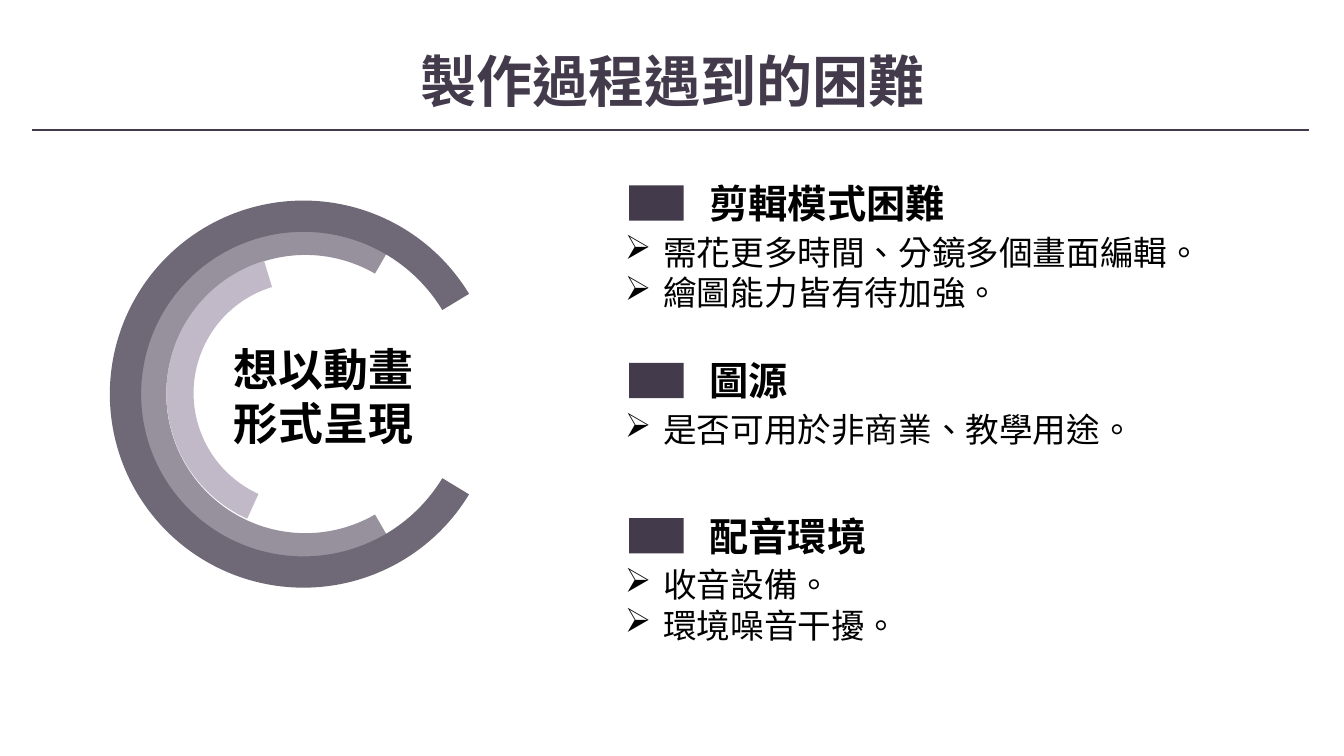
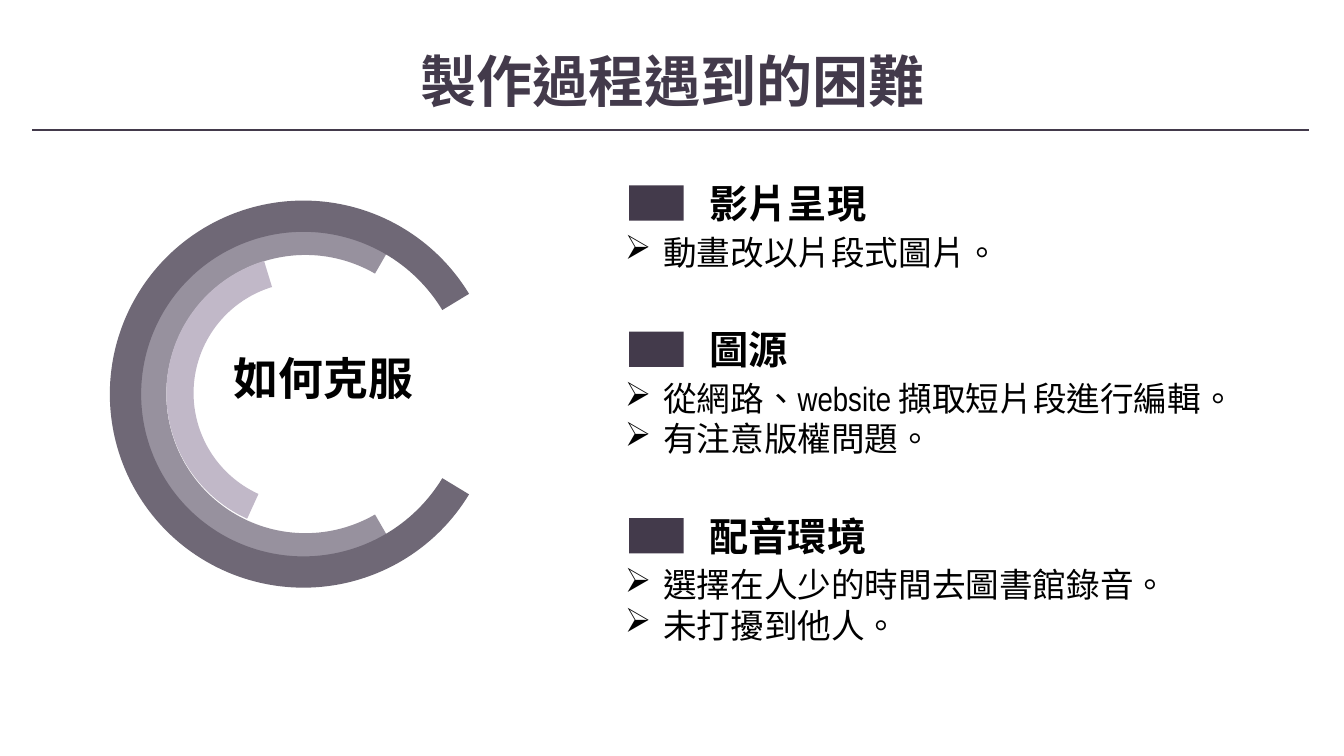
"""Two slides on production problems and how they were solved."""
from dataclasses import dataclass

from lxml import etree
from pptx import Presentation
from pptx.dml.color import RGBColor
from pptx.enum.lang import MSO_LANGUAGE_ID
from pptx.enum.shapes import MSO_CONNECTOR, MSO_SHAPE
from pptx.enum.text import MSO_ANCHOR, MSO_AUTO_SIZE, PP_ALIGN
from pptx.oxml.ns import qn
from pptx.util import Inches, Pt

ARC, RECT = MSO_SHAPE.BLOCK_ARC, MSO_SHAPE.RECTANGLE
LINE = MSO_CONNECTOR.STRAIGHT
GROW = MSO_AUTO_SIZE.SHAPE_TO_FIT_TEXT
TOP, MIDDLE = MSO_ANCHOR.TOP, MSO_ANCHOR.MIDDLE
CENTER = PP_ALIGN.CENTER
CHINESE = MSO_LANGUAGE_ID.TRADITIONAL_CHINESE

DARK, BLACK = "433A4B", "000000"
BODY, NARROW, HEAD = "Calibri", "Arial Narrow", "Noto Sans CJK JP"
TITLE = "製作過程遇到的困難"
INDENT = 0.38


@dataclass(frozen=True)
class Ring:
    x: float
    y: float
    outer: float
    inner: float
    start: float
    end: float
    fill: str
    alpha: int = 100


@dataclass(frozen=True)
class Part:
    text: str
    face: str = BODY


@dataclass(frozen=True)
class Topic:
    top: float
    head: str
    points: list[list[Part]]
    width: float = 5.73


@dataclass(frozen=True)
class Page:
    label: list[str]
    top: float
    topics: list[Topic]


RINGS = [
    Ring(3.03, 3.91, 1.65, 1.38, 60, 300, "7B7383", 78),
    Ring(3.02, 3.9, 1.37, 1.1, 114.5, 253, "C1B8C8"),
    Ring(3.01, 3.91, 1.92, 1.61, 31.2, 328.8, "6F6876"),
]

PAGES = [
    Page(["想以動畫", "形式呈現"], 3.34, [
        Topic(1.84, "剪輯模式困難", [
            [Part("需花更多時間、分鏡多個畫面編輯。")],
            [Part("繪圖能力皆有待加強。")],
        ]),
        Topic(3.6, "圖源", [[Part("是否可用於非商業、教學用途。")]]),
        Topic(5.14, "配音環境", [
            [Part("收音設備。")],
            [Part("環境噪音干擾。")],
        ]),
    ]),
    Page(["如何克服"], 3.43, [
        Topic(1.84, "影片呈現", [[Part("動畫改以片段式圖片。")]]),
        Topic(3.29, "圖源", [
            [Part("從網路、"), Part("website", NARROW),
             Part(" 擷取短片段進行編輯。")],
            [Part("有注意版權問題。")],
        ], 5.99),
        Topic(5.14, "配音環境", [
            [Part("選擇在人少的時間去圖書館錄音。")],
            [Part("未打擾到他人。")],
        ]),
    ]),
]


def paint(fill, color: str) -> None:
    """Set a solid colour from a hex string."""
    fill.solid()
    fill.fore_color.rgb = RGBColor.from_string(color)


def add_run(para, part: Part, size: int, color: str, bold: bool) -> None:
    """Add one styled run, with the same face for Latin and Chinese."""
    run = para.add_run()
    run.text = part.text
    font = run.font
    font.size, font.bold, font.name = Pt(size), bold, part.face
    font.language_id = CHINESE
    paint(font.fill, color)
    east = etree.Element(qn("a:ea"), typeface=part.face)
    font._element.find(qn("a:latin")).addnext(east)


def add_mark(para) -> None:
    """Give a paragraph an arrow bullet and a hanging indent."""
    props = para._p.get_or_add_pPr()
    props.set("marL", str(Inches(INDENT)))
    props.set("indent", str(-Inches(INDENT)))
    etree.SubElement(props, qn("a:buChar"), char="➢")


def add_text(slide, left: float, top: float, width: float, height: float,
             rows: list[list[Part]], size: int, bold: bool = True,
             mark: bool = False, wrap: bool = True) -> None:
    """Add a text box with one paragraph for each row."""
    box = slide.shapes.add_textbox(
        Inches(left), Inches(top), Inches(width), Inches(height))
    frame = box.text_frame
    frame.word_wrap, frame.auto_size = wrap, GROW
    frame.vertical_anchor = TOP
    for num, row in enumerate(rows):
        para = frame.add_paragraph() if num else frame.paragraphs[0]
        if mark:
            add_mark(para)
        for part in row:
            add_run(para, part, size, BLACK, bold)


def add_form(slide, kind, left: float, top: float, width: float,
             height: float, color: str):
    """Add a flat preset shape without an outline."""
    form = slide.shapes.add_shape(
        kind, Inches(left), Inches(top), Inches(width), Inches(height))
    form.shadow.inherit = False
    form.line.fill.background()
    paint(form.fill, color)
    return form


def add_title(slide) -> None:
    """Place the title and the rule below it."""
    title = slide.shapes.title
    title.left, title.top = Inches(4), Inches(0.46)
    title.width, title.height = Inches(5.34), Inches(0.67)
    frame = title.text_frame
    frame.margin_left = frame.margin_right = 0
    frame.margin_top = frame.margin_bottom = 0
    frame.word_wrap, frame.auto_size = True, GROW
    frame.vertical_anchor = MIDDLE
    para = frame.paragraphs[0]
    para.alignment, para.space_before = CENTER, Pt(0)
    add_run(para, Part(TITLE, HEAD), 40, DARK, True)

    rule = slide.shapes.add_connector(
        LINE, Inches(0.32), Inches(1.29), Inches(12.98), Inches(1.29))
    rule.line.width = Pt(0.75)
    paint(rule.line.fill, DARK)
    etree.SubElement(rule._element.spPr, qn("a:effectLst"))


def add_ring(slide, ring: Ring) -> None:
    """Draw an open ring clockwise from its start to its end angle."""
    size = 2 * ring.outer
    arc = add_form(slide, ARC, ring.x - ring.outer, ring.y - ring.outer,
                   size, size, ring.fill)
    arc.adjustments[0] = ring.start * 0.6
    arc.adjustments[1] = ring.end * 0.6
    arc.adjustments[2] = (ring.outer - ring.inner) / size
    if ring.alpha < 100:
        tone = arc._element.spPr.find(qn("a:solidFill"))[0]
        etree.SubElement(tone, qn("a:alpha"), val=str(ring.alpha * 1000))


def add_topic(slide, topic: Topic) -> None:
    """Draw a topic: its block, heading and bullet points."""
    add_form(slide, RECT, 6.24, topic.top, 0.54, 0.35, DARK)
    add_text(slide, 6.1, topic.top + 0.41, topic.width,
             0.1 + 0.4 * len(topic.points), topic.points, 24,
             bold=False, mark=True)
    add_text(slide, 6.94, topic.top - 0.11, 3.04, 0.57,
             [[Part(topic.head)]], 28)


def add_page(deck, page: Page) -> None:
    """Build one slide."""
    slide = deck.slides.add_slide(deck.slide_layouts[5])
    add_title(slide)
    for ring in RINGS:
        add_ring(slide, ring)
    rows = [[Part(line)] for line in page.label]
    add_text(slide, 2.22, page.top, 2, 0.1 + 0.54 * len(rows), rows, 32,
             wrap=False)
    for topic in page.topics:
        add_topic(slide, topic)


def main() -> None:
    """Build and save the deck."""
    deck = Presentation()
    deck.slide_width, deck.slide_height = Inches(13.33), Inches(7.5)
    for page in PAGES:
        add_page(deck, page)
    deck.save("out.pptx")


if __name__ == "__main__":
    main()
